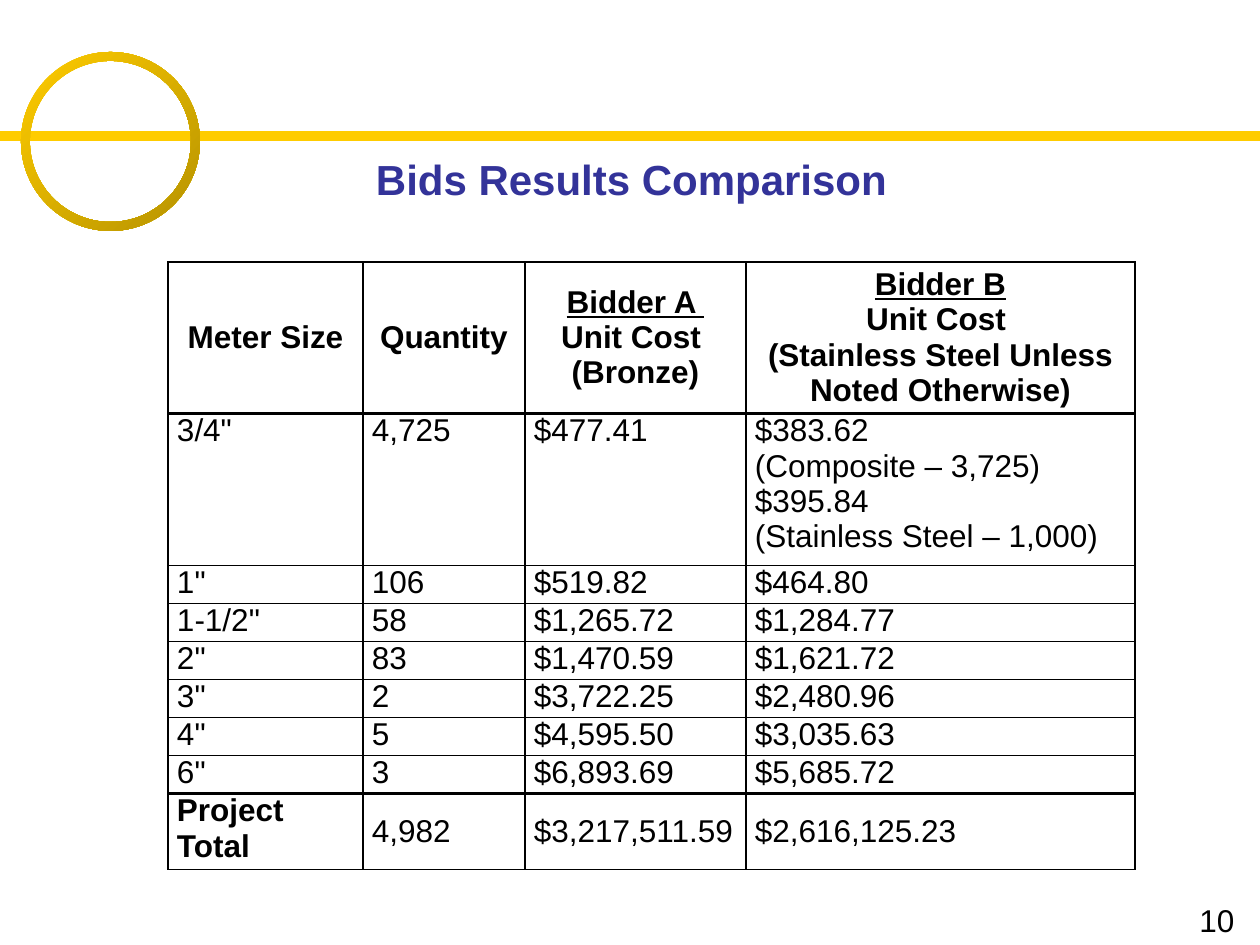
import pptx
import pptx.util
import pptx.dml.color
import pptx.enum.shapes
import pptx.enum.text
import pptx.oxml.ns
import lxml.etree

TITLE = "Bids Results Comparison"
PAGE = "10"
HEADS = [
    ["Meter Size"],
    ["Quantity"],
    ["Bidder A ", "Unit Cost ", "(Bronze)"],
    ["Bidder B", "Unit Cost ", "(Stainless Steel Unless Noted Otherwise)"],
]
BIDS = [
    ['3/4"', "4,725", "$477.41",
     ["$383.62 ", "(Composite – 3,725)", "$395.84 ", "(Stainless Steel – 1,000)"]],
    ['1"', "106", "$519.82", "$464.80"],
    ['1-1/2"', "58", "$1,265.72", "$1,284.77"],
    ['2"', "83", "$1,470.59", "$1,621.72"],
    ['3"', "2", "$3,722.25", "$2,480.96"],
    ['4"', "5", "$4,595.50", "$3,035.63"],
    ['6"', "3", "$6,893.69", "$5,685.72"],
    ["Project Total", "4,982", "$3,217,511.59 ", "$2,616,125.23 "],
]
WIDTHS = [195, 162, 221, 389]
HEIGHTS = [151, 152] + [38] * 6 + [76]
THICK = {0, 7}

ALIGN = pptx.enum.text.PP_ALIGN
ANCHOR = pptx.enum.text.MSO_ANCHOR
SHAPE = pptx.enum.shapes.MSO_SHAPE
A = pptx.oxml.ns.qn


def px(n):
    return pptx.util.Emu(n * 914400 // 126)


def color(code):
    return pptx.dml.color.RGBColor.from_string(code)


def write(frame, text, size=18, bold=False, tint="000000", align=ALIGN.LEFT, under=False):
    frame.word_wrap = True
    lines = [text] if isinstance(text, str) else text
    for i, line in enumerate(lines):
        para = frame.add_paragraph() if i else frame.paragraphs[0]
        para.alignment = align
        run = para.add_run()
        run.text = line
        font = run.font
        font.name, font.size, font.bold = "Arial", pptx.util.Pt(size), bold
        font.color.rgb = color(tint)
        font.underline = under and i == 0


def border(cell, row):
    props = cell._tc.get_or_add_tcPr()
    thick = {"T": row - 1 in THICK, "B": row in THICK}
    for side in "LRTB":
        wide = pptx.util.Pt(2.25 if thick.get(side) else 1)
        line = lxml.etree.SubElement(props, A("a:ln" + side), w=str(int(wide)))
        fill = lxml.etree.SubElement(line, A("a:solidFill"))
        lxml.etree.SubElement(fill, A("a:srgbClr"), val="000000")


def main():
    deck = pptx.Presentation()
    deck.slide_width, deck.slide_height = px(1260), px(945)
    shapes = deck.slides.add_slide(deck.slide_layouts[6]).shapes

    rule = shapes.add_connector(
        pptx.enum.shapes.MSO_CONNECTOR.STRAIGHT, px(0), px(136), px(1260), px(136))
    rule.line.color.rgb = color("FFCC00")
    rule.line.width = pptx.util.Pt(6)
    lxml.etree.SubElement(rule._element.spPr, A("a:effectLst"))

    ring = shapes.add_shape(SHAPE.DONUT, px(21), px(52), px(179), px(179))
    ring.shadow.inherit = False
    ring.adjustments[0] = 0.05
    ring.line.fill.background()
    ring.fill.gradient()
    ring.fill.gradient_angle = 315
    for stop, code in zip(ring.fill.gradient_stops, ["FFCC00", "B69200"]):
        stop.color.rgb = color(code)
    for stop, place in zip(ring.fill.gradient_stops, [0, 1]):
        stop.position = place

    title = shapes.add_textbox(px(96), px(147), px(1071), px(94))
    write(title.text_frame, TITLE, size=24, bold=True, tint="333399", align=ALIGN.CENTER)
    page = shapes.add_textbox(px(1187), px(895), px(62), px(50))
    write(page.text_frame, PAGE)

    rows = [HEADS] + BIDS
    table = shapes.add_table(len(rows), len(WIDTHS), px(168), px(262),
                             px(sum(WIDTHS)), px(sum(HEIGHTS))).table
    table.first_row = table.horz_banding = False
    for col, wide in zip(table.columns, WIDTHS):
        col.width = px(wide)
    last = len(rows) - 1
    for r, row in enumerate(rows):
        table.rows[r].height = px(HEIGHTS[r])
        for c, text in enumerate(row):
            cell = table.cell(r, c)
            head = r == 0
            cell.margin_left = cell.margin_right = px(9)
            cell.margin_top = cell.margin_bottom = 0
            middle = head or (r == last and c > 0)
            cell.vertical_anchor = ANCHOR.MIDDLE if middle else ANCHOR.TOP
            border(cell, r)
            cell.fill.background()
            write(cell.text_frame, text, bold=head or (r == last and c == 0),
                  align=ALIGN.CENTER if head else ALIGN.JUSTIFY, under=head and c > 1)

    deck.save("out.pptx")


if __name__ == "__main__":
    main()
